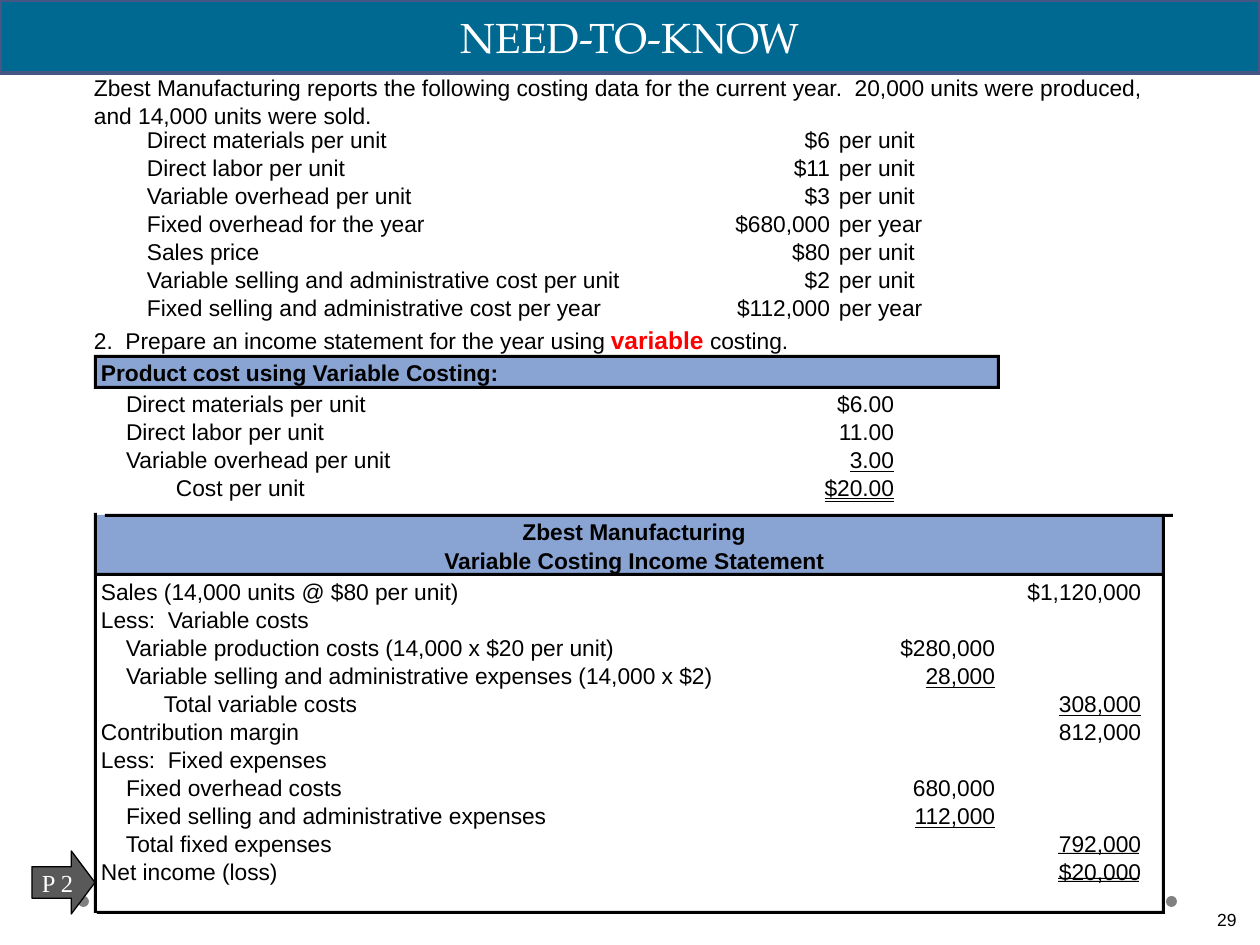
from pptx import Presentation
from pptx.dml.color import RGBColor
from pptx.enum.shapes import MSO_SHAPE
from pptx.enum.text import MSO_ANCHOR, MSO_AUTO_SIZE, MSO_UNDERLINE, PP_ALIGN
from pptx.util import Pt

EMU_PER_PX = 914400 / 126
ROW_PITCH = 28
DIGIT_WIDTH = 12.65
POINT_WIDTH = 6.32
BAR = 3

BLACK = RGBColor(0x00, 0x00, 0x00)
WHITE = RGBColor(0xFF, 0xFF, 0xFF)
RED = RGBColor(0xFF, 0x00, 0x00)
GRAY = RGBColor(0x80, 0x80, 0x80)
DARK_GRAY = RGBColor(0x59, 0x59, 0x59)
TEAL = RGBColor(0x00, 0x69, 0x91)
INDIGO = RGBColor(0x47, 0x57, 0x85)
BAND_BLUE = RGBColor(0x89, 0xA3, 0xD3)

SINGLE = MSO_UNDERLINE.SINGLE_LINE
DOUBLE = MSO_UNDERLINE.DOUBLE_LINE

# label, label width, amount, unit
COSTING_DATA = [
    ("Direct materials per unit", 243, "$6", "per unit"),
    ("Direct labor per unit", 202, "$11", "per unit"),
    ("Variable overhead per unit", 268, "$3", "per unit"),
    ("Fixed overhead for the year", 282, "$680,000", "per year"),
    ("Sales price", 120, "$80", "per unit"),
    ("Variable selling and administrative cost per unit", 493, "$2", "per unit"),
    ("Fixed selling and administrative cost per year", 461, "$112,000", "per year"),
]

# label, left, label width, amount, right edge of amount, underline
PRODUCT_COST = [
    ("Direct materials per unit", 126, 246, "$6.00", 894, None),
    ("Direct labor per unit", 126, 205, "11.00", 894, None),
    ("Variable overhead per unit", 126, 272, "3.00", 894, SINGLE),
    ("Cost per unit", 176, 137, "$20.00", 894, DOUBLE),
]
DETAIL, TOTAL = 995, 1141
INCOME_STATEMENT = [
    ("Sales (14,000 units @ $80 per unit)", 101, 363, "$1,120,000", TOTAL, None),
    ("Less:  Variable costs", 101, 215, "", TOTAL, None),
    ("Variable production costs (14,000 x $20 per unit)", 126, 493, "$280,000", DETAIL, None),
    ("Variable selling and administrative expenses (14,000 x $2)", 126, 588, "28,000", DETAIL, SINGLE),
    ("Total variable costs", 164, 203, "308,000", TOTAL, SINGLE),
    ("Contribution margin", 101, 205, "812,000", TOTAL, None),
    ("Less:  Fixed expenses", 101, 232, "", TOTAL, None),
    ("Fixed overhead costs", 126, 222, "680,000", DETAIL, None),
    ("Fixed selling and administrative expenses", 126, 423, "112,000", DETAIL, SINGLE),
    ("Total fixed expenses", 126, 215, "792,000", TOTAL, None),
    ("Net income (loss)", 101, 183, "$20,000", TOTAL, None),
]

FRAME_BARS = [
    (94, 355, BAR, 34), (94, 513, BAR, 400),
    (997, 358, BAR, 30), (1162, 516, BAR, 397),
    (97, 355, 903, BAR), (97, 386, 903, BAR),
    (105, 514, 1068, BAR), (97, 573, 1068, BAR), (97, 911, 1068, BAR),
]
TOTAL_RULES = [(1058, top, 81, 1) for top in (853, 878, 881)]


def px(*lengths):
    return [round(length * EMU_PER_PX) for length in lengths]


def add_run(paragraph, text, size=13, name="Arial", color=BLACK, bold=False, underline=None):
    run = paragraph.add_run()
    run.text = text
    run.font.size = Pt(size)
    run.font.name = name
    run.font.color.rgb = color
    run.font.bold = bold
    run.font.underline = underline


def add_filled(shapes, preset, box, fill, line=None, line_width=0):
    shape = shapes.add_shape(preset, *px(*box))
    shape.shadow.inherit = False
    shape.fill.solid()
    shape.fill.fore_color.rgb = fill
    if line is None:
        shape.line.fill.background()
    else:
        shape.line.color.rgb = line
        shape.line.width = Pt(line_width)
    return shape


def add_centered_label(shape, text, size, name):
    frame = shape.text_frame
    frame.vertical_anchor = MSO_ANCHOR.MIDDLE
    frame.word_wrap = False
    paragraph = frame.paragraphs[0]
    paragraph.alignment = PP_ALIGN.CENTER
    add_run(paragraph, text, size, name, WHITE)


def add_line_of_text(shapes, box, runs, align=PP_ALIGN.LEFT, wrap=False):
    """Add a text box without margins; runs are (text, font options) pairs."""
    frame = shapes.add_textbox(*px(*box)).text_frame
    frame.margin_left = frame.margin_top = frame.margin_right = frame.margin_bottom = 0
    frame.word_wrap = wrap
    frame.auto_size = MSO_AUTO_SIZE.SHAPE_TO_FIT_TEXT
    paragraph = frame.paragraphs[0]
    paragraph.alignment = align
    for text, options in runs:
        add_run(paragraph, text, **options)


def add_amount(shapes, right, top, text, underline=None):
    points = text.count(",") + text.count(".")
    width = (len(text) - points) * DIGIT_WIDTH + points * POINT_WIDTH
    add_line_of_text(shapes, (right - width, top, width, 28),
                     [(text, {"underline": underline})], PP_ALIGN.RIGHT)


def add_costing_data(shapes, top):
    group_shapes = shapes.add_group_shape().shapes
    for index, (label, width, amount, unit) in enumerate(COSTING_DATA):
        row_top = top + index * ROW_PITCH
        add_line_of_text(group_shapes, (147, row_top, width, 28), [(label, {})])
        add_amount(group_shapes, 830, row_top, amount)
        add_line_of_text(group_shapes, (839, row_top, 85, 28), [(unit, {})])


def add_statement(shapes, top, rows):
    for index, (label, left, width, amount, right, underline) in enumerate(rows):
        row_top = top + index * ROW_PITCH
        add_line_of_text(shapes, (left, row_top, width, 28), [(label, {})])
        if amount:
            add_amount(shapes, right, row_top, amount, underline)


def add_slide_number(shapes):
    frame = shapes.add_textbox(*px(1176, 903, 73, 31)).text_frame
    frame.word_wrap = True
    frame.paragraphs[0].alignment = PP_ALIGN.RIGHT
    add_run(frame.paragraphs[0], "29", 10)


def main():
    presentation = Presentation()
    presentation.slide_width, presentation.slide_height = px(1260, 945)
    slide = presentation.slides.add_slide(presentation.slide_layouts[6])
    shapes = slide.shapes

    for left in (1166, 78):
        add_filled(shapes, MSO_SHAPE.OVAL, (left, 896, 11, 11), GRAY)
    banner = add_filled(shapes, MSO_SHAPE.RECTANGLE, (0, 0, 1260, 73), TEAL, INDIGO, 2.25)
    add_centered_label(banner, "NEED-TO-KNOW", 24, "TeX Gyre Pagella")
    for band in ((96, 357, 904, 32), (96, 515, 1069, 61)):
        add_filled(shapes, MSO_SHAPE.RECTANGLE, band, BAND_BLUE)

    add_line_of_text(shapes, (94, 325, 704, 30), [
        ("2.  Prepare an income statement for the year using ", {}),
        ("variable", {"size": 14, "color": RED, "bold": True}),
        (" costing.", {}),
    ])
    bold = {"bold": True}
    add_line_of_text(shapes, (101, 359, 403, 28),
                     [("Product cost using Variable Costing:", bold)])
    add_statement(shapes, 390, PRODUCT_COST)
    for title, top, width in (("Zbest Manufacturing", 518, 226),
                              ("Variable Costing Income Statement", 547, 384)):
        add_line_of_text(shapes, (634 - width / 2, top, width, 28),
                         [(title, bold)], PP_ALIGN.CENTER)
    add_statement(shapes, 578, INCOME_STATEMENT)
    for bar in FRAME_BARS + TOTAL_RULES:
        add_filled(shapes, MSO_SHAPE.RECTANGLE, bar, BLACK)

    add_line_of_text(shapes, (94, 74, 1086, 55), [
        ("Zbest Manufacturing reports the following costing data for the current year.  "
         "20,000 units were produced, and 14,000 units were sold.", {}),
    ], wrap=True)
    add_costing_data(shapes, 126)
    add_slide_number(shapes)

    arrow = add_filled(shapes, MSO_SHAPE.RIGHT_ARROW, (32, 851, 63, 63), DARK_GRAY, BLACK, 0.75)
    arrow.adjustments[0] = 0.5
    arrow.adjustments[1] = 0.375
    add_centered_label(arrow, "P 2", 14, "Times New Roman")
    presentation.save("out.pptx")


if __name__ == "__main__":
    main()
